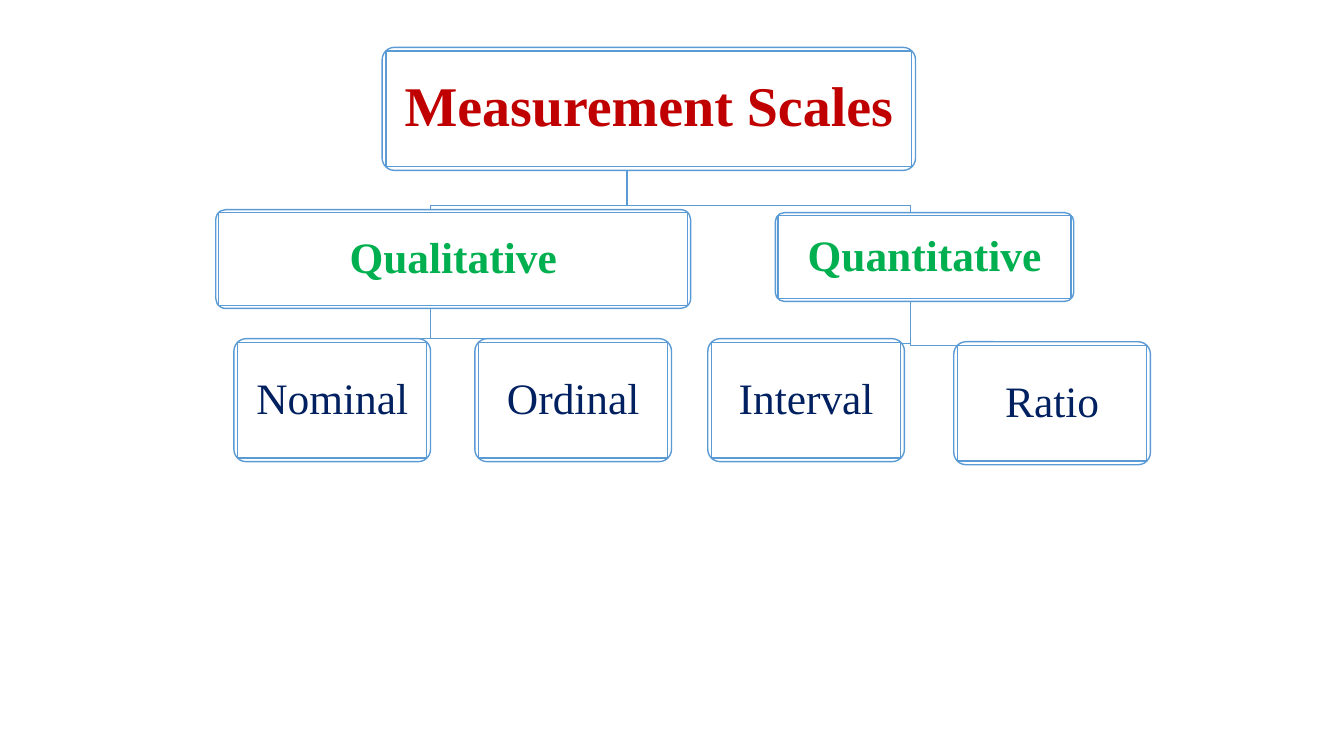
from pptx import Presentation
from pptx.dml.color import RGBColor
from pptx.enum.shapes import MSO_SHAPE as Preset
from pptx.enum.text import MSO_ANCHOR as Anchor, MSO_AUTO_SIZE as AutoSize, PP_ALIGN as Align
from pptx.util import Inches, Pt

COLORS = {
    "paper": "FFFFFF",
    "outline": "5B9BD5",
    "root": "C00000",
    "branch": "00B050",
    "leaf": "002060",
}
FONT = "Times New Roman"
SIZES = {"root": 40, "branch": 31, "leaf": 31}
CORNER = 0.1
INSET = 0.03
DROP = 0.18

NODES = [
    ("Measurement Scales", "root", (3.79, 0.47, 5.29, 1.22)),
    ("Qualitative", "branch", (2.14, 2.08, 4.71, 0.98)),
    ("Nominal", "leaf", (2.32, 3.36, 1.95, 1.22)),
    ("Ordinal", "leaf", (4.71, 3.36, 1.95, 1.22)),
    ("Quantitative", "branch", (7.69, 2.11, 2.96, 0.88)),
    ("Interval", "leaf", (7.02, 3.36, 1.95, 1.22)),
    ("Ratio", "leaf", (9.46, 3.39, 1.95, 1.22)),
]
LINKS = [
    ((9.03, 2.97), (10.22, 3.61)),
    ((9.03, 2.97), (7.78, 3.59)),
    ((4.27, 2.97), (5.46, 3.54)),
    ((4.27, 2.97), (3.08, 3.54)),
    ((6.22, 1.66), (9.03, 2.22)),
    ((6.22, 1.66), (4.27, 2.22)),
]


def color(name):
    return RGBColor.from_string(COLORS[name])


def outline(shape):
    shape.line.color.rgb = color("outline")
    shape.line.width = Pt(1)


def paint(shape):
    shape.fill.solid()
    shape.fill.fore_color.rgb = color("paper")
    outline(shape)


def add_link(page, start, end):
    bend = end[1] - DROP
    corners = [(start[0], bend), (end[0], bend), end]
    builder = page.shapes.build_freeform(Inches(start[0]), Inches(start[1]))
    builder.add_line_segments([(Inches(x), Inches(y)) for x, y in corners], close=False)
    link = builder.convert_to_shape()
    link.shadow.inherit = False
    link.fill.background()
    outline(link)


def write_label(box, text, level):
    frame = box.text_frame
    frame.word_wrap = True
    frame.auto_size = AutoSize.NONE
    frame.vertical_anchor = Anchor.MIDDLE
    frame.margin_left = frame.margin_right = Inches(0.13)
    frame.margin_top = frame.margin_bottom = Inches(0.13)
    para = frame.paragraphs[0]
    para.text = text
    para.alignment = Align.CENTER
    para.line_spacing = 0.9
    para.space_before = Pt(0)
    para.font.name = FONT
    para.font.size = Pt(SIZES[level])
    para.font.bold = level != "leaf"
    para.font.color.rgb = color(level)


def add_node(page, text, level, area):
    left, top, width, height = area
    border = page.shapes.add_shape(Preset.ROUNDED_RECTANGLE, *map(Inches, area))
    border.adjustments[0] = CORNER
    border.shadow.inherit = False
    paint(border)

    gap = INSET * height
    inner = [Inches(n) for n in (left + gap, top + gap, width - 2 * gap, height - 2 * gap)]
    if level == "root":
        box = page.shapes.title
        box.left, box.top, box.width, box.height = inner
        border.element.addnext(box.element)
    else:
        box = page.shapes.add_shape(Preset.RECTANGLE, *inner)
        box.shadow.inherit = False
    paint(box)
    write_label(box, text, level)


def build_tree(page):
    for start, end in LINKS:
        add_link(page, start, end)
    for text, level, area in NODES:
        add_node(page, text, level, area)


def main():
    deck = Presentation()
    deck.slide_width = Inches(13.33)
    deck.slide_height = Inches(7.5)
    page = deck.slides.add_slide(deck.slide_layouts[5])
    build_tree(page)
    deck.save("out.pptx")


if __name__ == "__main__":
    main()
